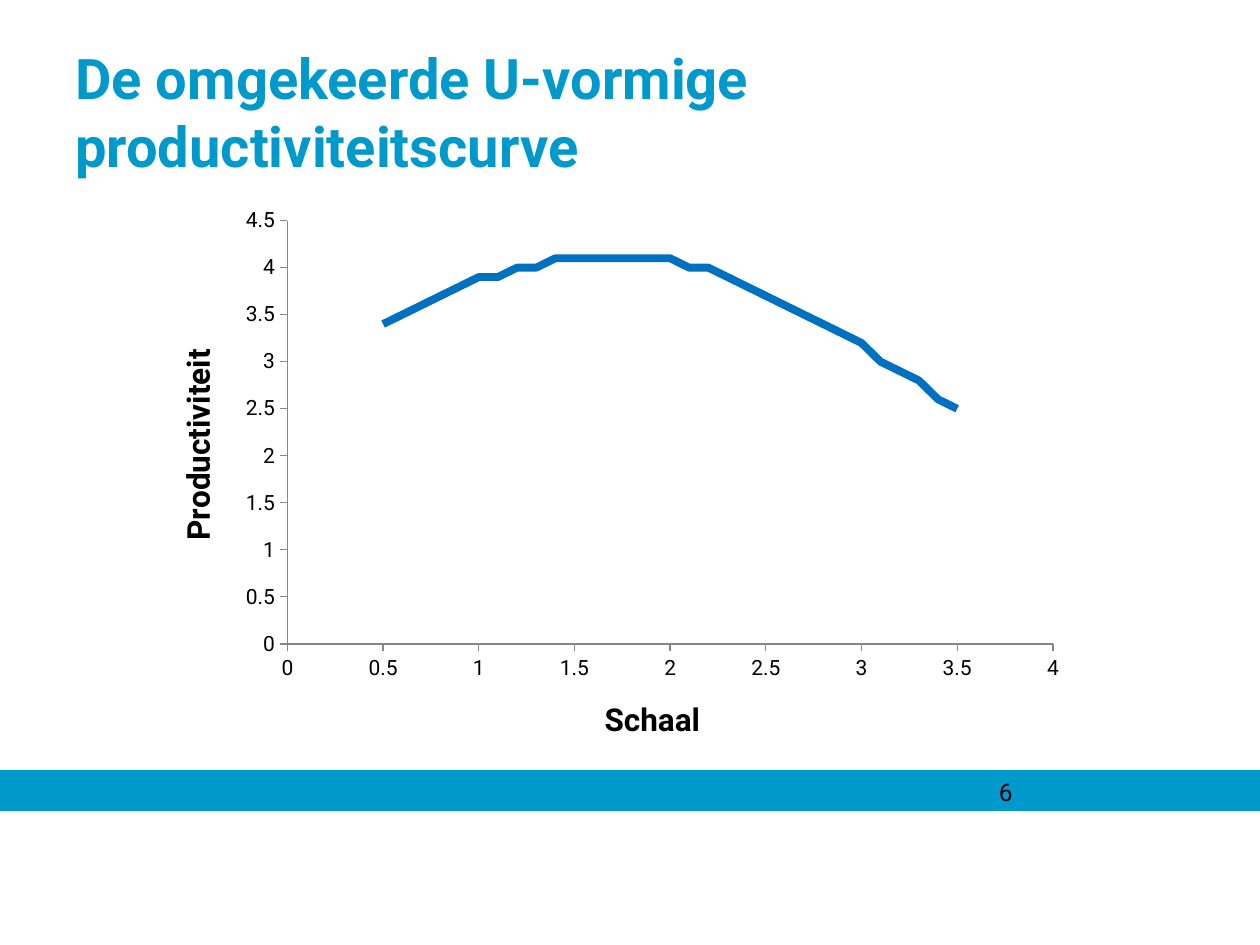
from dataclasses import dataclass

from lxml import etree
from pptx import Presentation
from pptx import util as u
from pptx.chart.data import XyChartData
from pptx.dml.color import RGBColor
from pptx.enum import chart as ch, shapes, text
from pptx.oxml.ns import qn

SLIDE_W, SLIDE_H = 10, 7.5


@dataclass(frozen=True)
class Theme:
    accent: RGBColor = RGBColor(0x00, 0x99, 0xCC)
    curve: RGBColor = RGBColor(0x00, 0x70, 0xC0)
    axis: RGBColor = RGBColor(0x86, 0x86, 0x86)
    ink: RGBColor = RGBColor(0, 0, 0)
    body_font: str = "Roboto"
    title: int = 32
    axis_title: int = 18
    number: int = 14
    tick: int = 12


THEME = Theme()

PRODUCTIVITY = [
    3.4, 3.5, 3.6, 3.7, 3.8, 3.9, 3.9, 4, 4, 4.1, 4.1, 4.1, 4.1, 4.1, 4.1, 4.1,
    4, 4, 3.9, 3.8, 3.7, 3.6, 3.5, 3.4, 3.3, 3.2, 3, 2.9, 2.8, 2.6, 2.5,
]
SCALE = [(5 + step) / 10 for step in range(len(PRODUCTIVITY))]


def box(left, top, width, height):
    """Turn inches into a slide box."""
    return tuple(u.Inches(v) for v in (left, top, width, height))


def style(font, size, color, bold=False):
    font.size, font.name, font.bold = u.Pt(size), THEME.body_font, bold
    font.color.rgb = color


def add_text(slide, area, wording, **look):
    frame = slide.shapes.add_textbox(*area).text_frame
    frame.word_wrap = True
    frame.text = wording
    style(frame.paragraphs[0].runs[0].font, **look)


def add_number_band(slide, area):
    left, top, width, height = area
    band = slide.shapes.add_shape(shapes.MSO_SHAPE.RECTANGLE, *area)
    band.shadow.inherit = False
    band.fill.solid()
    band.fill.fore_color.rgb = THEME.accent
    band.line.color.rgb = THEME.accent
    band.line.width = u.Pt(0.75)
    number_area = (left + int(width * 0.783), top, int(width * 0.208), int(height * 0.8))
    add_text(slide, number_area, "6", size=THEME.number, color=THEME.ink)


def add_title(slide, area):
    add_text(slide, area, "De omgekeerde U-vormige productiviteitscurve",
             size=THEME.title, color=THEME.accent, bold=True)


def format_axis(axis, title, top):
    axis.has_major_gridlines = False
    axis.minimum_scale, axis.maximum_scale, axis.major_unit = 0, top, 0.5
    axis.major_tick_mark = ch.XL_TICK_MARK.OUTSIDE
    axis.minor_tick_mark = ch.XL_TICK_MARK.NONE
    axis.tick_labels.number_format = "General"
    axis.tick_labels.number_format_is_linked = False
    style(axis.tick_labels.font, THEME.tick, THEME.ink)
    axis.format.line.color.rgb = THEME.axis
    axis.format.line.width = u.Pt(0.75)
    axis.has_title = True
    frame = axis.axis_title.text_frame
    frame.text = title
    style(frame.paragraphs[0].runs[0].font, THEME.axis_title, THEME.ink, bold=True)


def fix_plot_area(chart, **shares):
    """Pin the inner plot area to shares of the chart (x, y, w, h)."""
    plot_area = chart._chartSpace.chart.plotArea
    for old in plot_area.findall(qn("c:layout")):
        plot_area.remove(old)
    layout = etree.Element(qn("c:layout"))
    manual = etree.SubElement(layout, qn("c:manualLayout"))
    settings = {"layoutTarget": "inner", "xMode": "edge", "yMode": "edge", **shares}
    for tag, value in settings.items():
        etree.SubElement(manual, qn(f"c:{tag}")).set("val", str(value))
    plot_area.insert(0, layout)


def add_curve_chart(slide, area):
    data = XyChartData()
    points = data.add_series("Series 1")
    for scale, productivity in zip(SCALE, PRODUCTIVITY):
        points.add_data_point(scale, productivity)
    chart = slide.shapes.add_chart(
        ch.XL_CHART_TYPE.XY_SCATTER_SMOOTH_NO_MARKERS, *area, data).chart
    style(chart.font, THEME.tick, THEME.ink)
    chart.has_title = chart.has_legend = False
    chart.plots[0].vary_by_categories = False
    curve = chart.plots[0].series[0]
    curve.smooth = True
    curve.marker.style = ch.XL_MARKER_STYLE.NONE
    curve.format.line.color.rgb = THEME.curve
    curve.format.line.width = u.Pt(4.5)
    format_axis(chart.category_axis, "Schaal", 4)
    format_axis(chart.value_axis, "Productiviteit", 4.5)
    fix_plot_area(chart, x=0.15, y=0.04, w=0.82, h=0.74)


def main():
    deck = Presentation()
    deck.slide_width, deck.slide_height = u.Inches(SLIDE_W), u.Inches(SLIDE_H)
    slide = deck.slides.add_slide(deck.slide_layouts[6])
    add_number_band(slide, box(0, 6.12, SLIDE_W, 0.31))
    add_curve_chart(slide, box(1.17, 1.57, 7.41, 4.54))
    add_title(slide, box(0.5, 0.3, 9.5, 0.76))
    deck.save("out.pptx")


if __name__ == "__main__":
    main()
